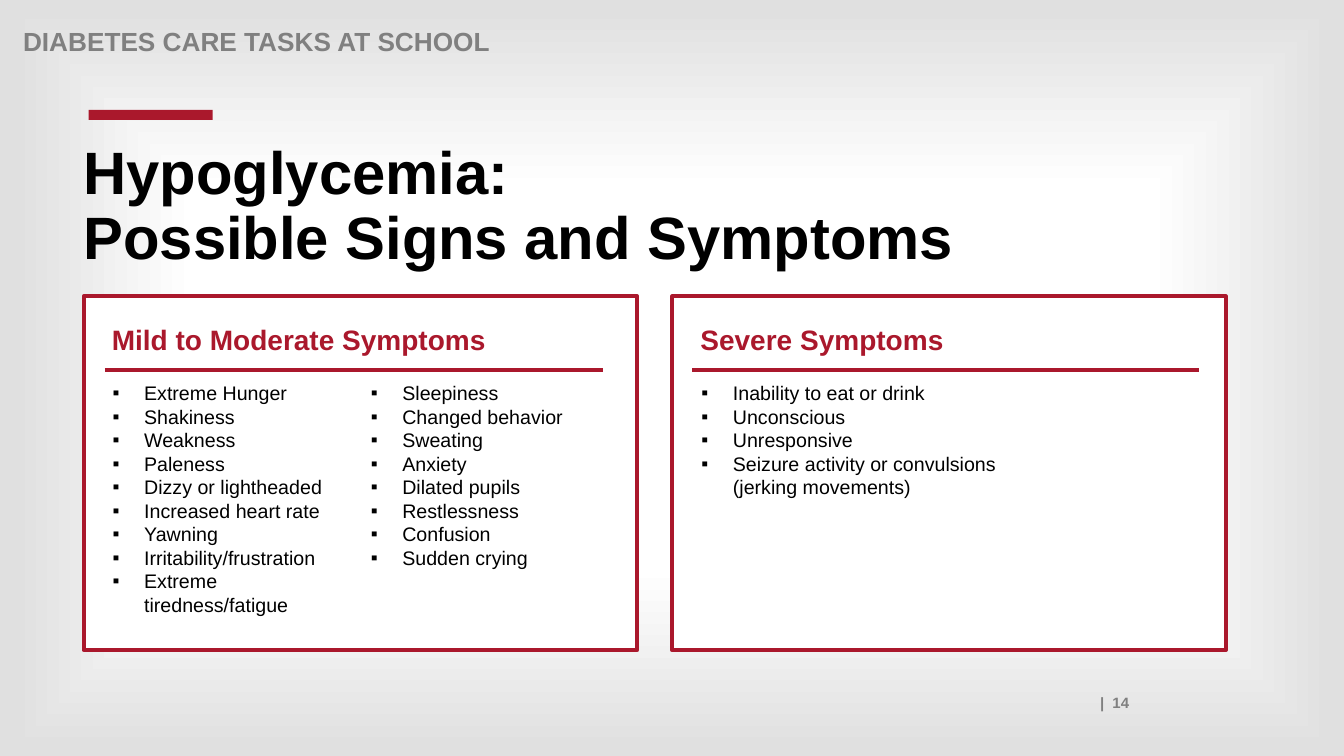
"""Build the slide on possible signs and symptoms of hypoglycemia."""
from dataclasses import dataclass

from lxml import etree
from pptx import Presentation
from pptx.dml.color import RGBColor
from pptx.enum import shapes, text
from pptx.oxml import ns
from pptx.util import Pt

RED, GRAY, BLACK, WHITE, EDGE = "AA182C", "808080", "000000", "FFFFFF", "E0E0E0"
PANEL_TOP, PANEL_WIDTH, PANEL_HEIGHT = 211.7, 395.3, 252.7
HEADING_TOP, RULE_TOP, LIST_TOP = 229.7, 264.2, 268.6
BULLET_INDENT = 22.5


@dataclass(frozen=True)
class Label:
    text: str
    left: float
    top: float
    width: float
    height: float
    size: float
    color: str
    align: text.PP_ALIGN = text.PP_ALIGN.LEFT
    line_spacing: float = 0.9


@dataclass(frozen=True)
class SymptomList:
    left: float
    width: float
    height: float
    items: tuple[str, ...]


@dataclass(frozen=True)
class Panel:
    left: float
    heading: str
    heading_width: float
    rule_left: float
    rule_right: float
    lists: tuple[SymptomList, ...]


LABELS = (
    Label("|  14", 87.1, 491.8, 726.5, 20.2, 10.7, GRAY, text.PP_ALIGN.RIGHT, 1.0),
    Label("DIABETES CARE TASKS AT SCHOOL", 9.4, 17.3, 792, 20.2, 18.7, GRAY),
    Label("Hypoglycemia:\vPossible Signs and Symptoms",
          52.6, 98.6, 794.2, 93.6, 42.7, BLACK),
)

PANELS = (
    Panel(59.8, "Mild to Moderate Symptoms", 365.8, 74.9, 430.6, (
        SymptomList(73.4, 177.1, 172.8, (
            "Extreme Hunger", "Shakiness", "Weakness", "Paleness",
            "Dizzy or lightheaded", "Increased heart rate", "Yawning",
            "Irritability/frustration", "Extreme tiredness/fatigue")),
        SymptomList(257.8, 177.1, 172.8, (
            "Sleepiness", "Changed behavior", "Sweating", "Anxiety",
            "Dilated pupils", "Restlessness", "Confusion", "Sudden crying")),
    )),
    Panel(480.2, "Severe Symptoms", 231.8, 494.6, 856.1, (
        SymptomList(493.9, 231.8, 51.8, (
            "Inability to eat or drink", "Unconscious", "Unresponsive",
            "Seizure activity or convulsions (jerking movements)")),
    )),
)


def rgb(color: str) -> RGBColor:
    return RGBColor.from_string(color)


def set_background(slide) -> None:
    fill = slide.background.fill
    fill.gradient()
    gradient = slide._element.cSld.find(".//" + ns.qn("a:gradFill"))
    for child in list(gradient):
        gradient.remove(child)
    stops = etree.SubElement(gradient, ns.qn("a:gsLst"))
    for percent, color in ((12, WHITE), (50, WHITE), (98, EDGE)):
        stop = etree.SubElement(stops, ns.qn("a:gs"), pos=str(percent * 1000))
        etree.SubElement(stop, ns.qn("a:srgbClr"), val=color)
    shading = etree.SubElement(gradient, ns.qn("a:path"), {"path": "shape"})
    etree.SubElement(shading, ns.qn("a:fillToRect"),
                     {side: "50000" for side in "ltrb"})


def add_text_frame(slide, left: float, top: float, width: float, height: float):
    box = slide.shapes.add_textbox(Pt(left), Pt(top), Pt(width), Pt(height))
    box.text_frame.word_wrap = True
    return box.text_frame


def style_paragraph(paragraph, size: float, color: str, bold: bool) -> None:
    font = paragraph.font
    font.name, font.size, font.bold = "Arial", Pt(size), bold
    font.color.rgb = rgb(color)


def add_label(slide, label: Label) -> None:
    frame = add_text_frame(slide, label.left, label.top, label.width, label.height)
    paragraph = frame.paragraphs[0]
    paragraph.text = label.text
    paragraph.alignment = label.align
    paragraph.line_spacing = label.line_spacing
    style_paragraph(paragraph, label.size, label.color, True)


def add_rectangle(slide, left: float, top: float, width: float, height: float,
                  fill: str, outline: str | None = None) -> None:
    shape = slide.shapes.add_shape(shapes.MSO_SHAPE.RECTANGLE,
                                   Pt(left), Pt(top), Pt(width), Pt(height))
    shape.shadow.inherit = False
    shape.fill.solid()
    shape.fill.fore_color.rgb = rgb(fill)
    if outline:
        shape.line.color.rgb = rgb(outline)
        shape.line.width = Pt(3)
    else:
        shape.line.fill.background()


def add_rule(slide, left: float, right: float) -> None:
    rule = slide.shapes.add_connector(shapes.MSO_CONNECTOR.STRAIGHT,
                                      Pt(left), Pt(RULE_TOP), Pt(right), Pt(RULE_TOP))
    rule.line.color.rgb = rgb(RED)
    rule.line.width = Pt(3)
    etree.SubElement(rule._element.spPr, ns.qn("a:effectLst"))


def add_symptom_list(slide, symptoms: SymptomList) -> None:
    frame = add_text_frame(slide, symptoms.left, LIST_TOP, symptoms.width, symptoms.height)
    for index, item in enumerate(symptoms.items):
        paragraph = frame.add_paragraph() if index else frame.paragraphs[0]
        paragraph.text = item
        properties = paragraph._p.get_or_add_pPr()
        properties.set("marL", str(Pt(BULLET_INDENT)))
        properties.set("indent", str(-Pt(BULLET_INDENT)))
        etree.SubElement(properties, ns.qn("a:buFont"), typeface="Arial")
        etree.SubElement(properties, ns.qn("a:buChar"), char="▪")
        style_paragraph(paragraph, 14, BLACK, False)


def add_panel(slide, panel: Panel) -> None:
    add_rectangle(slide, panel.left, PANEL_TOP, PANEL_WIDTH, PANEL_HEIGHT, WHITE, RED)
    add_label(slide, Label(panel.heading, panel.left + 13, HEADING_TOP,
                           panel.heading_width, 30.2, 20, RED))
    add_rule(slide, panel.rule_left, panel.rule_right)
    for symptoms in panel.lists:
        add_symptom_list(slide, symptoms)


def main() -> None:
    presentation = Presentation()
    presentation.slide_width, presentation.slide_height = Pt(960), Pt(540)
    slide = presentation.slides.add_slide(presentation.slide_layouts[6])
    set_background(slide)
    add_rectangle(slide, 63.4, 78.5, 88.6, 7.2, RED)
    for label in LABELS:
        add_label(slide, label)
    for panel in PANELS:
        add_panel(slide, panel)
    presentation.save("out.pptx")


if __name__ == "__main__":
    main()
